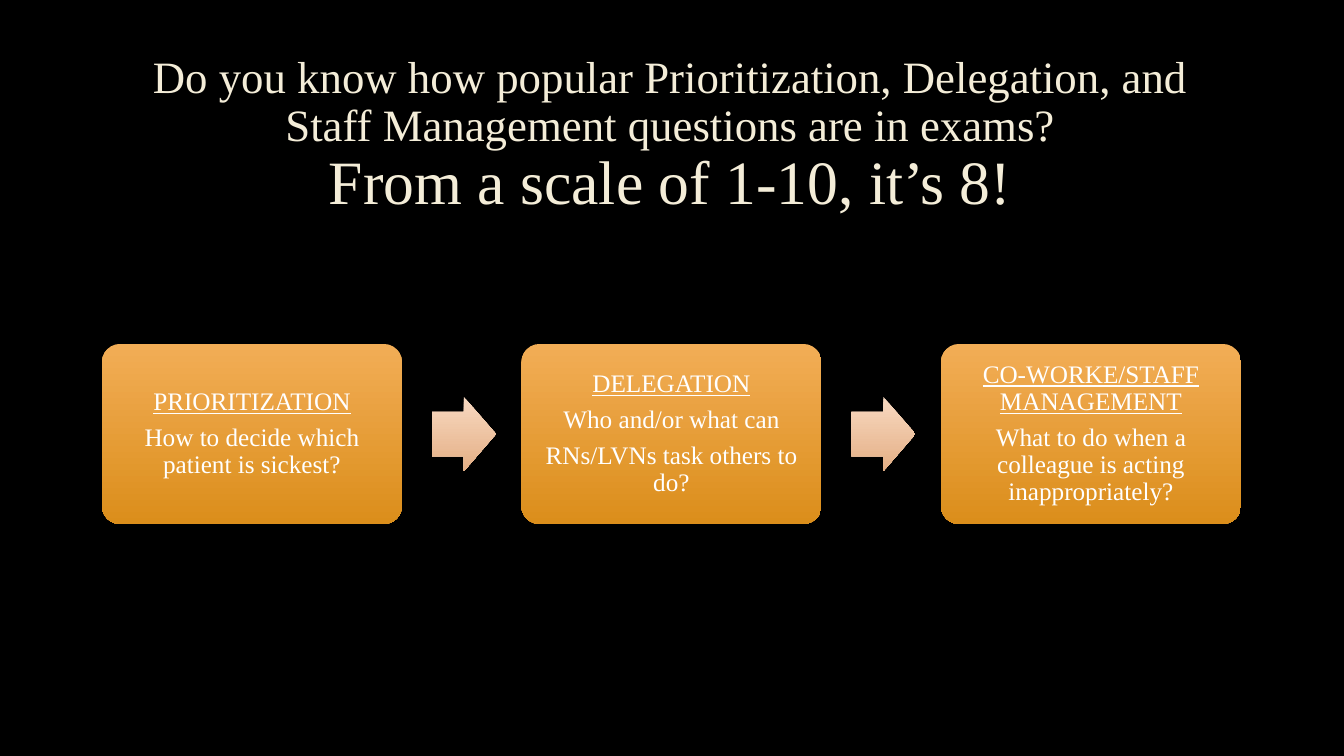
import copy
from dataclasses import dataclass

import pptx
import pptx.dml.color
import pptx.enum.shapes
import pptx.enum.text
import pptx.util

PX = 914400 / 100.8  # EMU in one px
SHAPE = pptx.enum.shapes.MSO_SHAPE
MIDDLE = pptx.enum.text.MSO_ANCHOR.MIDDLE
CENTER = pptx.enum.text.PP_ALIGN.CENTER


@dataclass(frozen=True)
class Theme:
    font: str = "Times New Roman"
    background: str = "000000"
    title: str = "F4EDD8"
    text: str = "FFFFFF"
    card: tuple = ("F2AD56", "DB8E1B")
    arrow: tuple = ("F8D9C1", "E4AF85")
    question_size: int = 32
    answer_size: int = 44
    card_size: int = 18


THEME = Theme()

QUESTION = ("Do you know how popular Prioritization, Delegation, and "
            "Staff Management questions are in exams?")
ANSWER = "From a scale of 1-10, it’s 8!"
CARDS = [
    ("PRIORITIZATION", "How to decide which patient is sickest?"),
    ("DELEGATION", "Who and/or what can", "RNs/LVNs task others to do?"),
    ("CO-WORKE/STAFF MANAGEMENT",
     "What to do when a colleague is acting inappropriately?"),
]


def px(n):
    return pptx.util.Emu(round(n * PX))


def rgb(color):
    return pptx.dml.color.RGBColor.from_string(color)


def add_text(p, text, size, color, underline=False):
    """Append a formatted run to a centred paragraph."""
    p.alignment = CENTER
    p.line_spacing = 0.9
    r = p.add_run()
    r.text = text
    r.font.name = THEME.font
    r.font.size = pptx.util.Pt(size)
    r.font.color.rgb = rgb(color)
    r.font.underline = underline
    return r


def add_gradient_shape(s, kind, box, colors, adjustments):
    """Add a borderless shape with a top-to-bottom gradient."""
    sp = s.shapes.add_shape(kind, *map(px, box))
    sp.shadow.inherit = False
    sp.line.fill.background()
    sp.fill.gradient()
    sp.fill.gradient_angle = 270
    for stop, color in zip(sp.fill.gradient_stops, colors):
        stop.color.rgb = rgb(color)
    for i, value in enumerate(adjustments):
        sp.adjustments[i] = value
    return sp


def add_title(s, box):
    sp = s.shapes.title
    sp.left, sp.top, sp.width, sp.height = map(px, box)
    tf = sp.text_frame
    tf.word_wrap = True
    tf.auto_size = pptx.enum.text.MSO_AUTO_SIZE.NONE
    tf.vertical_anchor = MIDDLE
    p = tf.paragraphs[0]
    r = add_text(p, QUESTION, THEME.question_size, THEME.title)
    # The line break takes the size of the question
    p._p.add_br().insert(0, copy.deepcopy(r._r.rPr))
    add_text(p, ANSWER, THEME.answer_size, THEME.title)


def add_card(s, box, lines):
    sp = add_gradient_shape(s, SHAPE.ROUNDED_RECTANGLE, box, THEME.card, [0.1])
    tf = sp.text_frame
    tf.word_wrap = True
    tf.vertical_anchor = MIDDLE
    tf.margin_left = tf.margin_right = px(12)
    tf.margin_top = tf.margin_bottom = px(12)
    for i, line in enumerate(lines):
        p = tf.add_paragraph() if i else tf.paragraphs[0]
        p.space_after = pptx.util.Pt(0.35 * THEME.card_size)
        add_text(p, line, THEME.card_size, THEME.text, underline=i == 0)


def add_process(s, box, cards):
    """Spread the cards evenly over the box, with an arrow in each gap."""
    left, top, width, height = box
    card_w, arrow_w, arrow_h, arrow_gap = 300, 64, 74, 30
    pitch = (width - card_w) / (len(cards) - 1)
    for i, lines in enumerate(cards):
        x = left + i * pitch
        add_card(s, (x, top, card_w, height), lines)
        if i < len(cards) - 1:
            arrow = (x + card_w + arrow_gap, top + (height - arrow_h) / 2,
                     arrow_w, arrow_h)
            add_gradient_shape(s, SHAPE.RIGHT_ARROW, arrow, THEME.arrow,
                               [0.6, 0.5])


def main():
    prs = pptx.Presentation()
    prs.slide_width, prs.slide_height = px(1344), px(756)
    s = prs.slides.add_slide(prs.slide_layouts[5])  # title only
    s.background.fill.solid()
    s.background.fill.fore_color.rgb = rgb(THEME.background)
    add_title(s, (100, 67, 1141, 139))
    add_process(s, (102, 344, 1139, 180), CARDS)
    prs.save("out.pptx")


if __name__ == "__main__":
    main()
